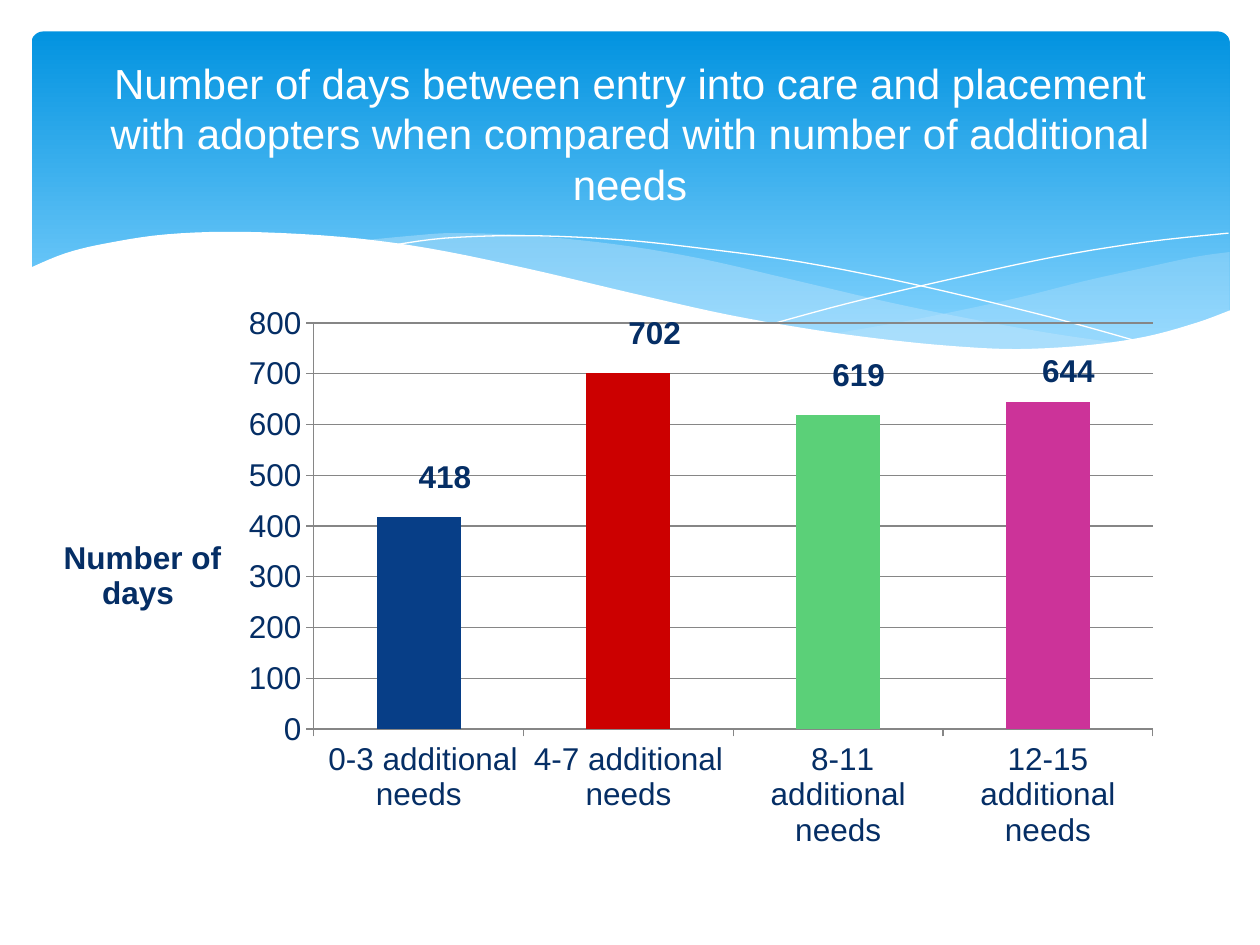
import pptx
import pptx.chart.data
import pptx.dml.color
import pptx.enum.chart
import pptx.enum.shapes
import pptx.enum.text
import pptx.oxml
import pptx.oxml.ns
import pptx.util

Inches = pptx.util.Inches
Pt = pptx.util.Pt
qn = pptx.oxml.ns.qn

FONT = "Arial"
COLORS = {
    "sky_top": "0293E0", "sky_bottom": "83D3FE", "mist": "C6E7FC", "white": "FFFFFF",
    "text": "052E65", "grid": "868686",
    "navy": "073E87", "red": "CC0000", "green": "5BD078", "magenta": "CC3399",
}

# Category, days, bar colour, label shift as fractions of the chart size
BARS = [
    (" 0-3 additional needs", 418, "navy", (0.023, -0.03)),
    ("4-7 additional needs", 702, "red", (0.023, -0.03)),
    (" 8-11 additional needs", 619, "green", (0.018, -0.03)),
    ("12-15 additional needs", 644, "magenta", (0.018, -0.015)),
]

# Key points of the wave edges, left to right, in inches
RIGHT_TOP = [(6.61, 2.65), (7.29, 2.53), (8.05, 2.37), (8.61, 2.23), (9.06, 2.13),
             (9.48, 2.04), (9.76, 2)]
RIGHT_BOTTOM = [(6.61, 2.65), (7.05, 2.71), (7.57, 2.76), (8.03, 2.78), (8.54, 2.76),
                (8.97, 2.7), (9.35, 2.62), (9.76, 2.47)]
MIDDLE_TOP = [(2.86, 1.91), (3.28, 1.87), (3.61, 1.85), (4.2, 1.87), (4.89, 1.94),
              (5.55, 2.05), (6.29, 2.22), (7.06, 2.4), (7.75, 2.54), (8.37, 2.65), (8.93, 2.73)]
MIDDLE_BOTTOM = [(2.86, 1.91), (3.42, 1.99), (4.04, 2.11), (4.91, 2.32), (5.66, 2.48),
                 (6.34, 2.61), (6.95, 2.7), (7.48, 2.76), (8.07, 2.78), (8.57, 2.77), (8.93, 2.73)]
FALLING_LINE = [(3.09, 1.95), (3.53, 1.89), (4.16, 1.87), (4.89, 1.9), (5.56, 1.97),
                (6.36, 2.08), (7.27, 2.26), (8.31, 2.51), (9.07, 2.72)]
RISING_LINE = [(6.13, 2.57), (6.72, 2.41), (7.48, 2.23), (8.36, 2.04), (9.1, 1.92), (9.75, 1.85)]
FRONT_TOP = [(0.23, 2.13), (0.52, 2.01), (0.85, 1.93), (1.32, 1.86), (1.93, 1.84), (2.71, 1.88),
             (3.4, 1.97), (4.18, 2.13), (5.03, 2.33), (5.79, 2.5), (6.48, 2.62), (7.08, 2.7),
             (7.61, 2.75), (8.09, 2.77), (8.63, 2.74), (9.1, 2.67), (9.5, 2.56), (9.77, 2.46)]


def rgb(name):
    return pptx.dml.color.RGBColor.from_string(COLORS[name])


def smooth(points, steps=5):
    """Run a Catmull-Rom curve through the points."""
    padded = [points[0], *points, points[-1]]
    curve = [points[0]]
    for before, start, end, after in zip(padded, padded[1:], padded[2:], padded[3:]):
        for step in range(1, steps + 1):
            t = step / steps
            curve.append(tuple(
                (2 * b + (c - a) * t + (2 * a - 5 * b + 4 * c - d) * t ** 2
                 + (3 * b - a - 3 * c + d) * t ** 3) / 2
                for a, b, c, d in zip(before, start, end, after)))
    return curve


def add_outline(slide, points, closed):
    corners = [(Inches(x), Inches(y)) for x, y in points]
    builder = slide.shapes.build_freeform(*corners[0])
    builder.add_line_segments(corners[1:], close=closed)
    shape = builder.convert_to_shape()
    shape.shadow.inherit = False
    return shape


def add_wave(slide, top, bottom, color, opacity=100):
    shape = add_outline(slide, smooth(top) + bottom[::-1], True)
    shape.line.fill.background()
    shape.fill.solid()
    shape.fill.fore_color.rgb = rgb(color)
    if opacity < 100:
        color_element = shape.element.spPr.find(qn("a:solidFill"))[0]
        alpha = color_element.makeelement(qn("a:alpha"), {"val": str(opacity * 1000)})
        color_element.append(alpha)


def add_thin_curve(slide, points):
    shape = add_outline(slide, smooth(points), False)
    shape.fill.background()
    shape.line.color.rgb = rgb("white")
    shape.line.width = Pt(0)


def add_banner(slide):
    banner = slide.shapes.add_shape(
        pptx.enum.shapes.MSO_SHAPE.ROUNDED_RECTANGLE,
        Inches(0.25), Inches(0.25), Inches(9.51), Inches(2.7))
    banner.adjustments[0] = 0.034
    banner.shadow.inherit = False
    banner.line.fill.background()
    banner.fill.gradient()
    banner.fill.gradient_angle = 270
    stops = [(0, "sky_top"), (0.9, "sky_bottom")]
    for stop, (position, color) in zip(banner.fill.gradient_stops, stops):
        stop.position = position
        stop.color.rgb = rgb(color)


def set_title(slide, text):
    title = slide.shapes.title
    title.left, title.top = Inches(0.5), Inches(0.37)
    title.width, title.height = Inches(9), Inches(1.37)
    frame = title.text_frame
    frame.text = text
    frame.word_wrap = True
    frame.vertical_anchor = pptx.enum.text.MSO_ANCHOR.MIDDLE
    paragraph = frame.paragraphs[0]
    paragraph.alignment = pptx.enum.text.PP_ALIGN.CENTER
    font = paragraph.runs[0].font
    font.name, font.size = FONT, Pt(24)
    font.color.rgb = rgb("white")
    # Bring the title in front of the banner
    title.element.getparent().append(title.element)


def make_layout(**values):
    """Build a manual chart layout."""
    items = "".join(f'<c:{key} val="{value}"/>' for key, value in values.items())
    return pptx.oxml.parse_xml(
        f'<c:layout {pptx.oxml.ns.nsdecls("c")}><c:manualLayout>{items}'
        "</c:manualLayout></c:layout>")


def replace_layout(element, position, layout):
    for old in element.findall(qn("c:layout")):
        element.remove(old)
    element.insert(position, layout)


def format_axes(chart):
    for axis in (chart.category_axis, chart.value_axis):
        axis.format.line.color.rgb = rgb("grid")
        axis.major_tick_mark = pptx.enum.chart.XL_TICK_MARK.OUTSIDE
    axis = chart.value_axis
    axis.minimum_scale, axis.maximum_scale, axis.major_unit = 0, 800, 100
    axis.has_major_gridlines = True
    axis.major_gridlines.format.line.color.rgb = rgb("grid")

    # Horizontal title to the left of the value axis
    frame = axis.axis_title.text_frame
    frame.text = "Number of days "
    font = frame.paragraphs[0].runs[0].font
    font.name, font.size, font.bold = FONT, Pt(18), True
    font.color.rgb = rgb("text")
    title = chart.element.find(".//" + qn("c:valAx")).find(qn("c:title"))
    body = title.find(".//" + qn("a:bodyPr"))
    body.set("rot", "0")
    body.set("vert", "horz")
    replace_layout(title, 1, make_layout(xMode="edge", yMode="edge", x=0.02, y=0.42))


def hide_leader_lines(chart):
    labels = chart.element.find(".//" + qn("c:dLbls"))
    for flag in labels.findall(qn("c:showLeaderLines")):
        flag.set("val", "0")
    labels.append(pptx.oxml.parse_xml(
        f'<c:extLst {pptx.oxml.ns.nsdecls("c")}>'
        '<c:ext uri="{CE6537A1-D6FC-4f65-9D91-7224C49458BB}" '
        'xmlns:c15="http://schemas.microsoft.com/office/drawing/2012/chart">'
        '<c15:showLeaderLines val="0"/></c:ext></c:extLst>'))


def format_bars(chart):
    plot = chart.plots[0]
    plot.gap_width = 150
    plot.vary_by_categories = False
    series = plot.series[0]
    for index, (_, _, color, _) in enumerate(BARS):
        point = series.points[index]
        point.format.fill.solid()
        point.format.fill.fore_color.rgb = rgb(color)
        label = point.data_label
        font = label.font
        font.name, font.size, font.bold = FONT, Pt(18), True
        font.color.rgb = rgb("text")
        label.position = pptx.enum.chart.XL_LABEL_POSITION.OUTSIDE_END
    for label, (_, _, _, (x, y)) in zip(chart.element.iter(qn("c:dLbl")), BARS):
        replace_layout(label, 1, make_layout(x=x, y=y))
    hide_leader_lines(chart)


def add_days_chart(slide):
    data = pptx.chart.data.CategoryChartData()
    data.categories = [bar[0] for bar in BARS]
    data.add_series("Series 1", [bar[1] for bar in BARS])
    chart = slide.shapes.add_chart(
        pptx.enum.chart.XL_CHART_TYPE.COLUMN_CLUSTERED,
        Inches(0.28), Inches(2.33), Inches(9.06), Inches(4.49), data).chart
    chart.has_title = False
    chart.has_legend = False
    chart.font.name, chart.font.size = FONT, Pt(18)
    chart.font.color.rgb = rgb("text")
    format_axes(chart)
    format_bars(chart)
    replace_layout(chart.element.find(".//" + qn("c:plotArea")), 0, make_layout(
        layoutTarget="inner", xMode="edge", yMode="edge", x=0.244, y=0.052, w=0.735, h=0.718))


def main():
    presentation = pptx.Presentation()
    presentation.slide_width, presentation.slide_height = Inches(10), Inches(7.5)
    slide = presentation.slides.add_slide(presentation.slide_layouts[5])

    # Banner with waves
    add_banner(slide)
    add_wave(slide, RIGHT_TOP, smooth(RIGHT_BOTTOM), "mist", 29)
    add_wave(slide, MIDDLE_TOP, smooth(MIDDLE_BOTTOM), "mist", 40)
    add_thin_curve(slide, FALLING_LINE)
    add_thin_curve(slide, RISING_LINE)
    add_wave(slide, FRONT_TOP, [(0.23, 3.29), (9.77, 3.29)], "white")

    # Title and chart
    set_title(slide, "Number of days between entry into care and placement with adopters "
                     "when compared with number of additional needs")
    add_days_chart(slide)
    presentation.save("out.pptx")


if __name__ == "__main__":
    main()
